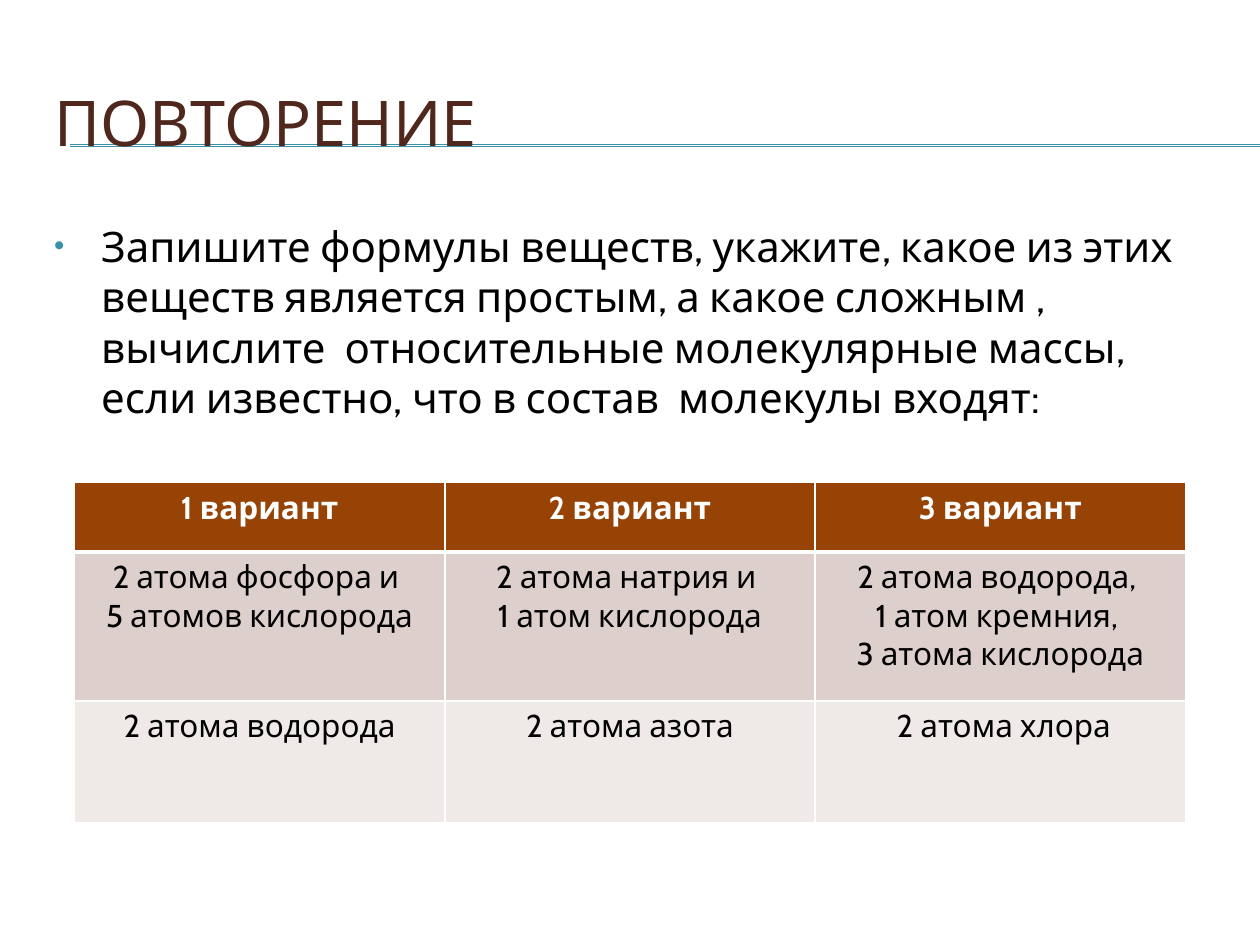
from lxml import etree
from pptx import Presentation
from pptx import util as u
from pptx.dml.color import RGBColor
from pptx.enum import shapes, text
from pptx.oxml import ns

FONT = "Cabin"
COLORS = {"accent": "3891A7", "title": "4F271C", "text": "000000", "white": "FFFFFF",
          "header": "964305", "band": "DDCFCC", "light": "EFE9E7"}


def add_run(p, words, size, color, bold=False):
    r = p.add_run()
    r.text = words
    r.font.name, r.font.size, r.font.bold = FONT, u.Pt(size), bold
    r.font.color.rgb = RGBColor.from_string(COLORS[color])


def add_xml(parent, tag, **attrs):
    return etree.SubElement(parent, ns.qn(tag), attrs)


prs = Presentation()
prs.slide_width, prs.slide_height = u.Cm(25.4), u.Cm(19.05)
s = prs.slides.add_slide(prs.slide_layouts[5])

# Rules behind the title
for i, y in enumerate((2.92, 2.95)):
    line = s.shapes.add_connector(shapes.MSO_CONNECTOR.STRAIGHT,
                                  u.Cm(1.42), u.Cm(y), u.Cm(25.4), u.Cm(y))
    line.line.color.rgb = RGBColor.from_string(COLORS["accent"])
    line.line.width = u.Pt(0.75)
    add_xml(line._element.spPr, "a:effectLst")
    s.shapes._spTree.insert(2 + i, line._element)

# Title
sp = s.shapes.title
sp.left, sp.top, sp.width, sp.height = u.Cm(0.84), u.Cm(1.27), u.Cm(24.13), u.Cm(2.34)
tf = sp.text_frame
tf.vertical_anchor = text.MSO_ANCHOR.MIDDLE
p = tf.paragraphs[0]
p.alignment = text.PP_ALIGN.LEFT
add_run(p, "ПОВТОРЕНИЕ", 36, "title")

# Task with a bullet
sp = s.shapes.add_textbox(u.Cm(0.84), u.Cm(4.32), u.Cm(24.13), u.Cm(5))
tf = sp.text_frame
tf.word_wrap = True
p = tf.paragraphs[0]
p.space_before = u.Pt(4.8)
pPr = p._p.get_or_add_pPr()
pPr.set("marL", str(u.Cm(0.95)))
pPr.set("indent", str(-u.Cm(0.95)))
add_xml(add_xml(pPr, "a:buClr"), "a:srgbClr", val=COLORS["accent"])
add_xml(pPr, "a:buSzPct", val="70000")
add_xml(pPr, "a:buFont", typeface="Arial")
add_xml(pPr, "a:buChar", char="•")
add_run(p, "Запишите формулы веществ, укажите, какое из этих веществ является простым, "
           "а какое сложным , вычислите  относительные молекулярные массы, "
           "если известно, что в состав  молекулы входят:", 24, "text")

# Table of variants: fill, text colour, height in cm, cells as lists of lines
rows = [
    ("header", "white", 1.4, [["1 вариант"], ["2 вариант"], ["3 вариант"]]),
    ("band", "text", 3, [["2 атома фосфора и ", "5 атомов кислорода"],
                         ["2 атома натрия и ", "1 атом кислорода"],
                         ["2 атома водорода, ", "1 атом кремния, ", "3 атома кислорода"]]),
    ("light", "text", 2.46, [["2 атома водорода"], ["2 атома азота"], [" 2 атома хлора"]]),
]
table = s.shapes.add_table(len(rows), 3, u.Cm(1.5), u.Cm(9.73), u.Cm(22.4), u.Cm(6.86)).table
for i, (fill, color, height, cells) in enumerate(rows):
    table.rows[i].height = u.Cm(height)
    for j, lines in enumerate(cells):
        cell = table.cell(i, j)
        # White borders, thicker between header and body
        tcPr = cell._tc.get_or_add_tcPr()
        for side in "LRTB":
            thick = (i, side) in ((0, "B"), (1, "T"))
            ln = add_xml(tcPr, f"a:ln{side}", w=str(u.Pt(3 if thick else 1)))
            add_xml(add_xml(ln, "a:solidFill"), "a:srgbClr", val=COLORS["white"])
        cell.fill.solid()
        cell.fill.fore_color.rgb = RGBColor.from_string(COLORS[fill])
        tf = cell.text_frame
        for k, words in enumerate(lines):
            p = tf.add_paragraph() if k else tf.paragraphs[0]
            p.alignment = text.PP_ALIGN.CENTER
            add_run(p, words, 18, color, bold=fill == "header")

prs.save("out.pptx")
